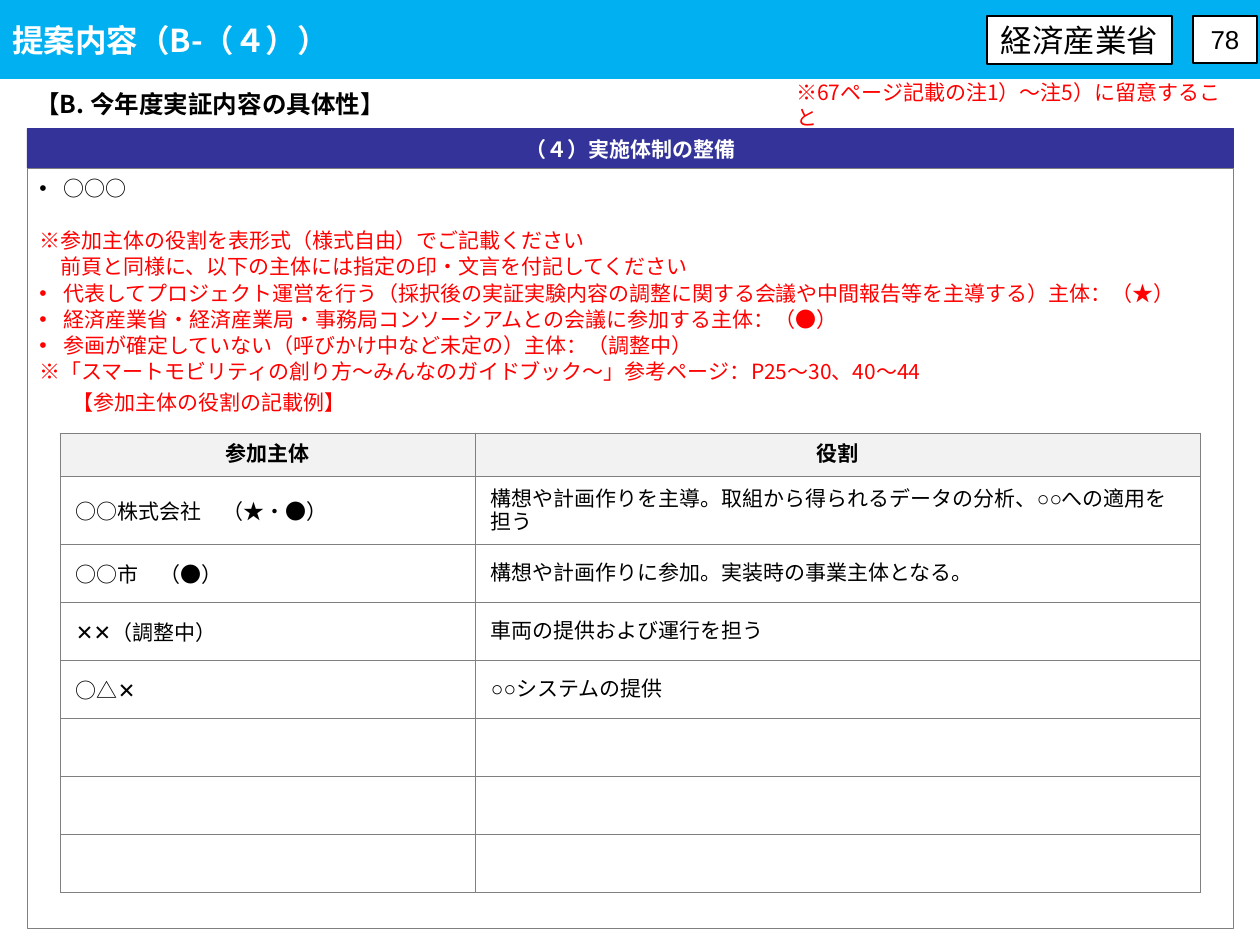
"""Builds the proposal slide on the project organisation and the roles of its members."""
from lxml import etree
from pptx import Presentation
from pptx.dml.color import RGBColor
from pptx.enum.shapes import MSO_SHAPE
from pptx.enum.text import MSO_ANCHOR, PP_ALIGN
from pptx.oxml.ns import qn
from pptx.util import Pt

RECTANGLE = MSO_SHAPE.RECTANGLE
TOP, MIDDLE = MSO_ANCHOR.TOP, MSO_ANCHOR.MIDDLE
LEFT, CENTER = PP_ALIGN.LEFT, PP_ALIGN.CENTER
PX = 7257
NOTO, ARIAL = "Noto Sans CJK JP", "Arial"
BLACK, WHITE, RED, GRAY = "000000", "FFFFFF", "FF0000", "808080"
SKY, NAVY, PALE = "00B0F0", "333399", "F2F2F2"


def write(frame, content, size=12, font=NOTO, color=BLACK, bold=False, align=LEFT,
          spacing=None, before=0, margin=0, bullet=False):
    paragraph = frame.paragraphs[0]
    if paragraph.runs:
        paragraph = frame.add_paragraph()
    paragraph.alignment = align
    paragraph.space_before = Pt(before)
    if spacing:
        paragraph.line_spacing = Pt(spacing)
    properties = paragraph._p.get_or_add_pPr()
    properties.set("marL", str(margin * PX))
    properties.set("indent", str(-margin * PX if bullet else 0))
    if bullet:
        etree.SubElement(properties, qn("a:buFont"), typeface=ARIAL)
        etree.SubElement(properties, qn("a:buChar"), char="•")
    run = paragraph.add_run()
    run.text = content
    run.font.size = Pt(size)
    run.font.bold = bold
    run.font.name = font
    run.font.color.rgb = RGBColor.from_string(color)
    etree.SubElement(run._r.get_or_add_rPr(), qn("a:ea"), typeface=font)


def box(place, fill=None, line=None, width=0.5, anchor=MIDDLE):
    left, top, wide, high = [value * PX for value in place]
    if fill or line:
        shape = slide.shapes.add_shape(RECTANGLE, left, top, wide, high)
        shape.shadow.inherit = False
        if fill:
            shape.fill.solid()
            shape.fill.fore_color.rgb = RGBColor.from_string(fill)
        else:
            shape.fill.background()
        if line:
            shape.line.color.rgb = RGBColor.from_string(line)
            shape.line.width = Pt(width)
        else:
            shape.line.fill.background()
    else:
        shape = slide.shapes.add_textbox(left, top, wide, high)
    shape.text_frame.word_wrap = True
    shape.text_frame.vertical_anchor = anchor
    return shape.text_frame


deck = Presentation()
deck.slide_width, deck.slide_height = 1260 * PX, 945 * PX
slide = deck.slides.add_slide(deck.slide_layouts[6])

title = box((0, 0, 1260, 79), fill=SKY)
write(title, "提案内容（B-（４））", size=18, color=WHITE, bold=True)
ministry = box((987, 16, 185, 48), fill=WHITE, line=BLACK, width=1)
write(ministry, "経済産業省", size=18, font=ARIAL, align=CENTER)
heading = box((23, 83, 449, 43), anchor=TOP)
write(heading, "【B. 今年度実証内容の具体性】", size=14, bold=True)
page = box((1193, 16, 64, 47), fill=WHITE, line=BLACK, width=0.75)
write(page, "78", size=14.8, font=ARIAL, align=CENTER)
banner = box((27, 129, 1207, 39), fill=NAVY, line=NAVY)
write(banner, "（４）実施体制の整備", font=ARIAL, color=WHITE, bold=True, align=CENTER, spacing=15)

guidance = box((27, 168, 1207, 761), line=GRAY, anchor=TOP)
write(guidance, "○○○", spacing=15, margin=24, bullet=True)
for content, layout in [
    ("※参加主体の役割を表形式（様式自由）でご記載ください", {"before": 15}),
    ("前頁と同様に、以下の主体には指定の印・文言を付記してください", {"margin": 21}),
    ("代表してプロジェクト運営を行う（採択後の実証実験内容の調整に関する会議や中間報告等を主導する）主体：（★）",
     {"margin": 24, "bullet": True}),
    ("経済産業省・経済産業局・事務局コンソーシアムとの会議に参加する主体：（●）",
     {"margin": 24, "bullet": True}),
    ("参画が確定していない（呼びかけ中など未定の）主体：（調整中）", {"margin": 24, "bullet": True}),
    ("※「スマートモビリティの創り方～みんなのガイドブック～」参考ページ：P25～30、40～44", {}),
]:
    write(guidance, content, color=RED, spacing=15, **layout)

reminder = box((784, 85, 449, 39))
write(reminder, "※67ページ記載の注1）～注5）に留意すること", color=RED)

roles = [
    ("参加主体", "役割"),
    ("○○株式会社　（★・●）", "構想や計画作りを主導。取組から得られるデータの分析、○○への適用を担う"),
    ("○○市　（●）", "構想や計画作りに参加。実装時の事業主体となる。"),
    ("✕✕（調整中）", "車両の提供および運行を担う"),
    ("○△✕", "○○システムの提供"),
    ("", ""),
    ("", ""),
    ("", ""),
]
table = slide.shapes.add_table(len(roles), 2, 60 * PX, 433 * PX, 1140 * PX, 445 * PX).table
table.first_row = table.horz_banding = False
table.columns[0].width, table.columns[1].width = 415 * PX, 725 * PX
for row, entries in enumerate(roles):
    is_header = row == 0
    table.rows[row].height = (39 if is_header else 58) * PX
    for column, content in enumerate(entries):
        cell = table.cell(row, column)
        cell.vertical_anchor = MIDDLE
        cell.margin_left = cell.margin_right = 16 * PX
        cell.margin_top = cell.margin_bottom = 9 * PX
        for side in ("a:lnL", "a:lnR", "a:lnT", "a:lnB"):
            border = etree.SubElement(cell._tc.get_or_add_tcPr(), qn(side), w=str(Pt(0.5)))
            paint = etree.SubElement(border, qn("a:solidFill"))
            etree.SubElement(paint, qn("a:srgbClr"), val=GRAY)
        cell.fill.solid()
        cell.fill.fore_color.rgb = RGBColor.from_string(PALE if is_header else WHITE)
        write(cell.text_frame, content, font=ARIAL if is_header or column else NOTO,
              bold=is_header, align=CENTER if is_header else LEFT)

example = box((60, 383, 367, 39))
write(example, "【参加主体の役割の記載例】", color=RED)

deck.save("out.pptx")
